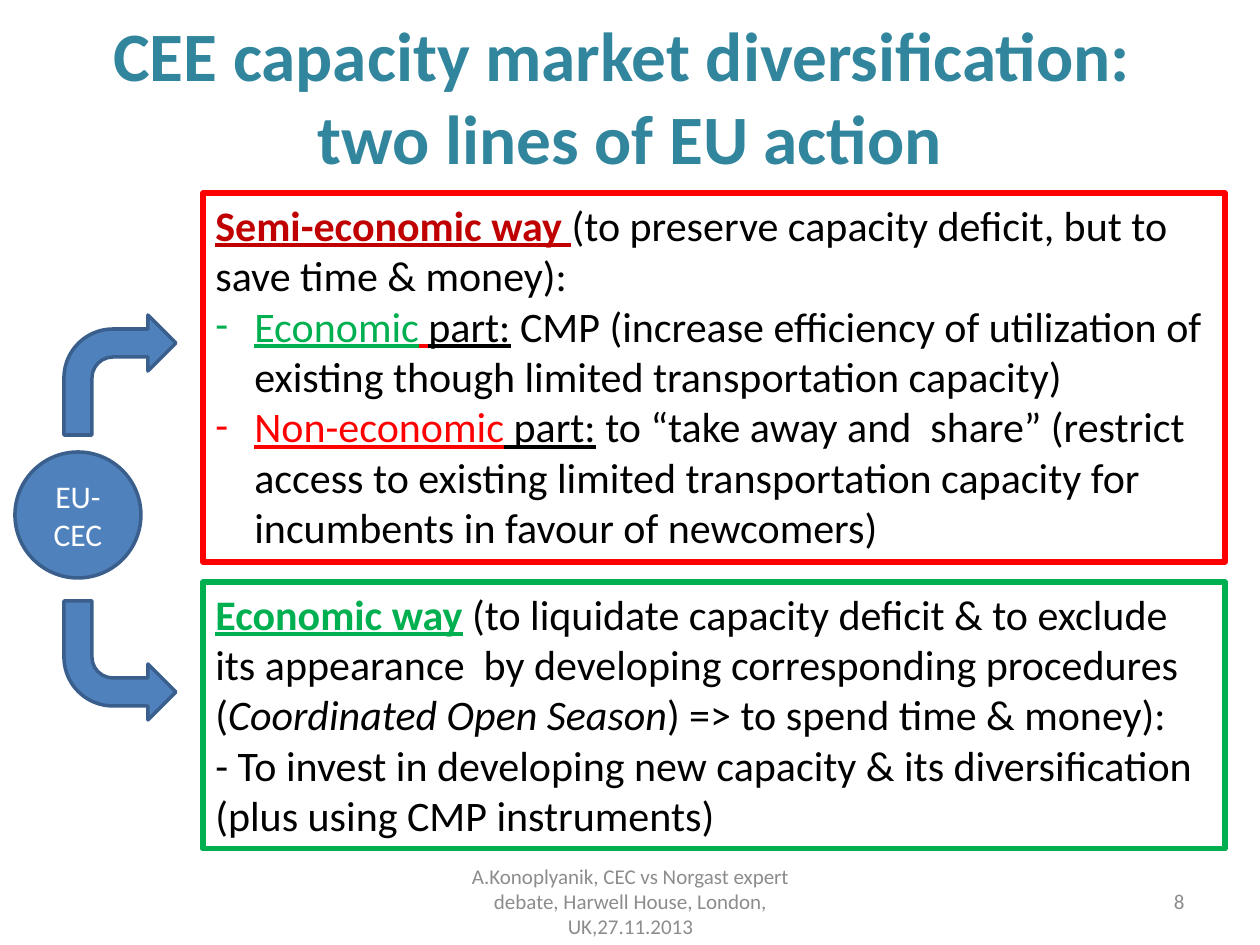
"""Build the slide on two lines of EU action for capacity market diversification."""
from dataclasses import dataclass

from lxml import etree
from pptx import Presentation
from pptx import util as u
from pptx.dml.color import RGBColor
from pptx.enum import shapes, text
from pptx.oxml.ns import qn

EMU_PER_PX = 914400 / 126


@dataclass(frozen=True)
class Theme:
    font: str = "Calibri"
    teal: str = "31859C"
    grey: str = "8C8C8C"
    blue: str = "4F81BD"
    navy: str = "3A5F8C"
    red: str = "FF0000"
    crimson: str = "C00000"
    green: str = "00B050"
    black: str = "000000"
    white: str = "FFFFFF"
    title_size: float = 39.6
    body_size: int = 24
    label_size: int = 18
    footer_size: int = 12
    outline: int = 2
    frame: int = 3


THEME = Theme()
MSO = shapes.MSO_SHAPE
ALIGN = text.PP_ALIGN


def px(length):
    return u.Emu(round(length * EMU_PER_PX))


def place(box):
    return [px(length) for length in box]


def style_run(run, size, color, bold=False, underline=False, italic=False):
    font = run.font
    font.name, font.size = THEME.font, u.Pt(size)
    font.color.rgb = RGBColor.from_string(color)
    font.bold, font.underline, font.italic = bold, underline, italic


def write_line(frame, wording, size, color, align, bold=False):
    frame.text = wording
    frame.word_wrap = True
    frame.vertical_anchor = text.MSO_ANCHOR.MIDDLE
    line = frame.paragraphs[0]
    line.alignment = align
    for run in line.runs:
        style_run(run, size, color, bold)


def add_title(slide, wording, box):
    title = slide.shapes.title
    title.left, title.top, title.width, title.height = place(box)
    write_line(title.text_frame, wording, THEME.title_size, THEME.teal, ALIGN.CENTER, True)
    title.text_frame.auto_size = text.MSO_AUTO_SIZE.NONE


def add_footer(slide, wording, box, align):
    footer = slide.shapes.add_textbox(*place(box))
    write_line(footer.text_frame, wording, THEME.footer_size, THEME.grey, align)


def add_figure(slide, kind, box, line_color, line_width, fill=None):
    figure = slide.shapes.add_shape(kind, *place(box))
    figure.shadow.inherit = False
    if fill:
        figure.fill.solid()
        figure.fill.fore_color.rgb = RGBColor.from_string(fill)
    else:
        figure.fill.background()
    figure.line.color.rgb = RGBColor.from_string(line_color)
    figure.line.width = u.Pt(line_width)
    return figure


def add_actor(slide, wording, box):
    actor = add_figure(slide, MSO.OVAL, box, THEME.navy, THEME.outline, THEME.blue)
    write_line(actor.text_frame, wording, THEME.label_size, THEME.white, ALIGN.CENTER)


def add_arrow(slide, box, downward=False):
    arrow = add_figure(slide, MSO.BENT_ARROW, box, THEME.navy, THEME.outline, THEME.blue)
    if downward:
        arrow.element.spPr.find(qn("a:xfrm")).set("flipV", "1")


def add_dash(paragraph, indent):
    properties = paragraph._p.get_or_add_pPr()
    properties.set("marL", str(px(indent)))
    properties.set("indent", str(-px(indent)))
    etree.SubElement(properties, qn("a:buFont"), typeface=THEME.font)
    etree.SubElement(properties, qn("a:buChar"), char="-")


def add_way(slide, box, color, paragraphs):
    way = add_figure(slide, MSO.RECTANGLE, box, color, THEME.frame)
    frame = way.text_frame
    frame.word_wrap = True
    frame.vertical_anchor = text.MSO_ANCHOR.TOP
    frame.auto_size = text.MSO_AUTO_SIZE.SHAPE_TO_FIT_TEXT
    for index, (dashed, pieces) in enumerate(paragraphs):
        paragraph = frame.add_paragraph() if index else frame.paragraphs[0]
        paragraph.alignment = ALIGN.LEFT
        if dashed:
            add_dash(paragraph, 39)
        for wording, run_color, emphasis in pieces:
            run = paragraph.add_run()
            run.text = wording
            style_run(run, THEME.body_size, run_color, **emphasis)


def main():
    t = THEME
    plain, under = {}, {"underline": True}
    heading, italic = {"bold": True, "underline": True}, {"italic": True}
    semi_economic = [
        (False, [("Semi-economic way ", t.crimson, heading),
                 ("(to preserve capacity deficit, but to save time & money):", t.black, plain)]),
        (True, [("Economic", t.green, under), (" ", t.red, under),
                ("part:", t.black, under),
                (" CMP (increase efficiency of utilization of existing though limited "
                 "transportation capacity)", t.black, plain)]),
        (True, [("Non-economic", t.red, under), (" part:", t.black, under),
                (" to “take away and  share” (restrict access to existing limited "
                 "transportation capacity for incumbents in favour of newcomers)",
                 t.black, plain)]),
    ]
    economic = [
        (False, [("Economic way", t.green, heading),
                 (" (to liquidate capacity deficit & to exclude its appearance  by "
                  "developing corresponding procedures (", t.black, plain),
                 ("Coordinated Open Season", t.black, italic),
                 (") => to spend time & money):", t.black, plain)]),
        (False, [("- To invest in developing new capacity & its diversification "
                  "(plus using CMP instruments)", t.black, plain)]),
    ]

    deck = Presentation()
    deck.slide_width, deck.slide_height = px(1260), px(945)
    slide = deck.slides.add_slide(deck.slide_layouts[5])
    add_title(slide, "CEE capacity market diversification: \vtwo lines of EU action",
              (0, 16, 1260, 159))
    add_footer(slide, "A.Konoplyanik, CEC vs Norgast expert debate, Harwell House, "
               "London, UK,27.11.2013", (431, 876, 399, 50), ALIGN.CENTER)
    add_footer(slide, "8", (903, 876, 294, 50), ALIGN.RIGHT)
    add_actor(slide, "EU-CEC", (15, 452, 126, 126))
    add_way(slide, (203, 193, 1022, 369), t.red, semi_economic)
    add_way(slide, (203, 582, 1022, 267), t.green, economic)
    add_arrow(slide, (64, 315, 112, 120))
    add_arrow(slide, (64, 601, 112, 119), downward=True)
    deck.save("out.pptx")


if __name__ == "__main__":
    main()
